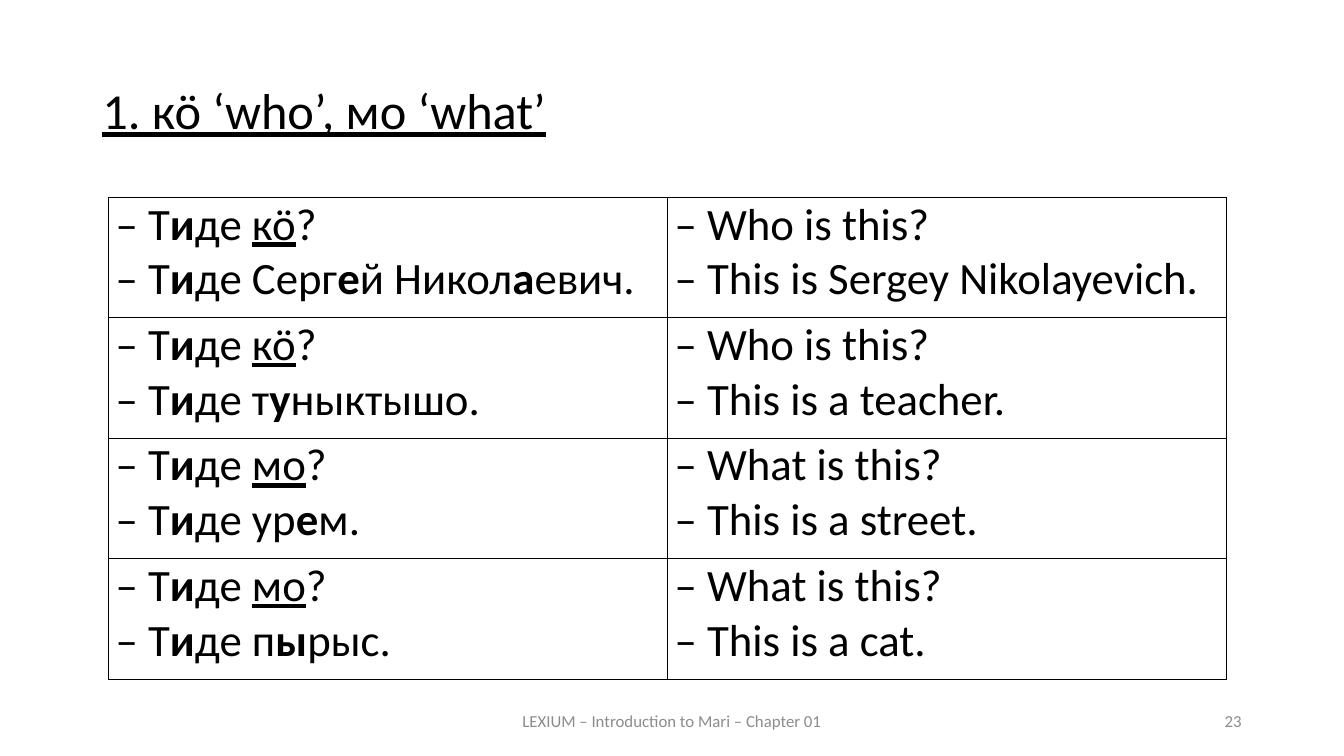
from lxml import etree
from pptx import Presentation
from pptx import util as u
from pptx.dml import color
from pptx.enum import text as t
from pptx.oxml import ns

COLORS = {"ink": "000000", "footer": "8C8C8C"}

DIALOGUES = [
    ("– Т*и*де _кӧ_?", "– Т*и*де Серг*е*й Никол*а*евич.",
     "– Who is this?", "– This is Sergey Nikolayevich."),
    ("– Т*и*де _кӧ_?", "– Т*и*де т*у*ныктышо.",
     "– Who is this?", "– This is a teacher."),
    ("– Т*и*де _мо_?", "– Т*и*де ур*е*м.",
     "– What is this?", "– This is a street."),
    ("– Т*и*де _мо_?", "– Т*и*де п*ы*рыс.",
     "– What is this?", "– This is a cat."),
]


def write(paragraph, marked, size, ink="ink", align=t.PP_ALIGN.JUSTIFY, spacing=None, before=None):
    """Write text in which *stars* mark bold and _underscores_ mark underline."""
    paragraph.alignment = align
    if spacing:
        paragraph.line_spacing = spacing
    if before:
        paragraph.space_before = u.Pt(before)
    for i, chunk in enumerate(marked.split("*")):
        for j, piece in enumerate(chunk.split("_")):
            if piece:
                run = paragraph.add_run()
                run.text = piece
                run.font.name = "Calibri"
                run.font.size = u.Pt(size)
                run.font.bold = i % 2 == 1
                run.font.underline = j % 2 == 1
                run.font.color.rgb = color.RGBColor.from_string(COLORS[ink])


class Lesson:
    """Holds the slide and its style, and adds each kind of element."""

    def __init__(self, deck):
        self.slide = deck.slides.add_slide(deck.slide_layouts[6])
        self.border_width = 1
        self.side_margin = 5

    def label(self, left, top, width, height, marked, size, **style):
        """Add one line of text, centred vertically in its box."""
        box = self.slide.shapes.add_textbox(*map(u.Pt, (left, top, width, height)))
        frame = box.text_frame
        frame.word_wrap = True
        frame.vertical_anchor = t.MSO_ANCHOR.MIDDLE
        write(frame.paragraphs[0], marked, size, **style)

    def border(self, cell):
        """Draw a thin line on all four sides of a cell."""
        properties = cell._tc.get_or_add_tcPr()
        for position, side in enumerate(("lnL", "lnR", "lnT", "lnB")):
            line = etree.Element(ns.qn(f"a:{side}"), w=str(u.Pt(self.border_width)))
            fill = etree.SubElement(line, ns.qn("a:solidFill"))
            etree.SubElement(fill, ns.qn("a:srgbClr"), val=COLORS["ink"])
            properties.insert(position, line)

    def cell(self, cell, lines, size):
        """Fill one table cell with a question and its answer."""
        cell.margin_left = cell.margin_right = u.Pt(self.side_margin)
        cell.margin_top = cell.margin_bottom = 0
        cell.fill.background()
        self.border(cell)
        frame = cell.text_frame
        for number, line in enumerate(lines):
            paragraph = frame.add_paragraph() if number else frame.paragraphs[0]
            write(paragraph, line, size)

    def phrases(self, left, top, width, height, dialogues, size):
        """Add the table of dialogues with their translations."""
        table = self.slide.shapes.add_table(
            len(dialogues), 2, *map(u.Pt, (left, top, width, height))).table
        table.first_row = table.horz_banding = False
        for row, dialogue in enumerate(dialogues):
            self.cell(table.cell(row, 0), dialogue[:2], size)
            self.cell(table.cell(row, 1), dialogue[2:], size)


def main():
    """Build the slide and save it."""
    deck = Presentation()
    deck.slide_width, deck.slide_height = u.Pt(960), u.Pt(540)
    lesson = Lesson(deck)
    lesson.label(66, 28.75, 828, 104.4, "_1. кӧ ‘who’, мо ‘what’_", 36, spacing=0.9, before=18)
    lesson.phrases(77.6, 141, 798.6, 344.2, DIALOGUES, 32)
    lesson.label(318, 500.5, 324, 28.75, "LEXIUM – Introduction to Mari – Chapter 01", 12,
                 ink="footer", align=t.PP_ALIGN.CENTER)
    lesson.label(678, 500.5, 216, 28.75, "23", 12, ink="footer", align=t.PP_ALIGN.RIGHT)
    deck.save("out.pptx")


if __name__ == "__main__":
    main()
